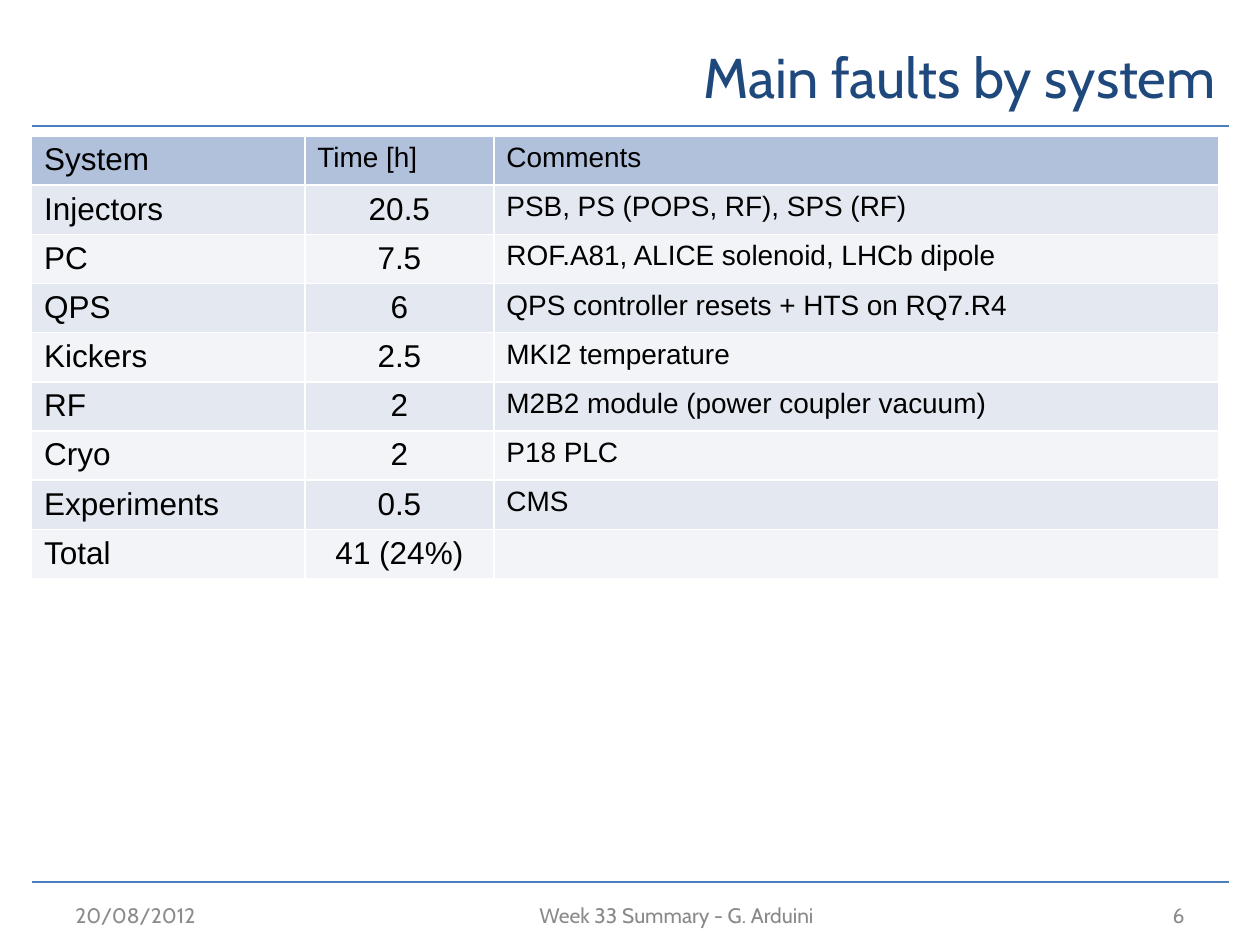
from pptx import Presentation
from pptx.dml.color import RGBColor
from pptx.enum.shapes import MSO_CONNECTOR
from pptx.enum.text import MSO_ANCHOR, PP_ALIGN
from pptx.oxml.ns import qn
from pptx.util import Inches, Pt
from lxml import etree

LEFT, MID, RIGHT = PP_ALIGN.LEFT, PP_ALIGN.CENTER, PP_ALIGN.RIGHT
CENTRE = MSO_ANCHOR.MIDDLE
STRAIGHT = MSO_CONNECTOR.STRAIGHT

NAVY = RGBColor(0x1F, 0x49, 0x7D)
BLUE = RGBColor(0x4B, 0x7E, 0xBC)
GREY = RGBColor(0x8C, 0x8C, 0x8C)
SLATE = RGBColor(0x89, 0x89, 0x89)
BLACK = RGBColor(0, 0, 0)
HEAD = RGBColor(0xB2, 0xC1, 0xDB)
BANDS = RGBColor(0xF2, 0xF4, 0xF8), RGBColor(0xE4, 0xE9, 0xF1)

WIDE, HIGH = 10, 7.5
EDGE = 0.25
COLS = 2.17, 1.5, 5.75
ROW = 0.38
FAULTS = [
    ("System", "Time [h]", "Comments"),
    ("Injectors", "20.5", "PSB, PS (POPS, RF), SPS (RF)"),
    ("PC", "7.5", "ROF.A81, ALICE solenoid, LHCb dipole"),
    ("QPS", "6", "QPS controller resets + HTS on RQ7.R4"),
    ("Kickers", "2.5", "MKI2 temperature"),
    ("RF", "2", "M2B2 module (power coupler vacuum)"),
    ("Cryo", "2", "P18 PLC"),
    ("Experiments", "0.5", "CMS"),
    ("Total", "41 (24%)", ""),
]


def write(frame, text, size=12, font="Cabin", color=GREY, align=LEFT):
    """Write one formatted line into a text frame."""
    line = frame.paragraphs[0]
    line.alignment = align
    run = line.add_run()
    run.text = text
    run.font.size = Pt(size)
    run.font.name = font
    run.font.bold = False
    run.font.color.rgb = color


def label(slide, box, text, **style):
    """Place a centred-height text box."""
    frame = slide.shapes.add_textbox(*map(Inches, box)).text_frame
    frame.word_wrap = True
    frame.vertical_anchor = CENTRE
    frame.margin_top = frame.margin_bottom = 0
    write(frame, text, **style)


def rule(slide, top):
    """Draw a line across the slide between its edges."""
    line = slide.shapes.add_connector(
        STRAIGHT, *map(Inches, (EDGE, top, WIDE - EDGE, top)))
    line.line.color.rgb = BLUE
    line.line.width = Pt(1.5)
    etree.SubElement(line._element.spPr, qn("a:effectLst"))


def header(slide, box):
    """Place the title above its rule."""
    rule(slide, 1)
    label(slide, box, "Main faults by system", size=32, color=NAVY, align=RIGHT)


def faults(slide, left, top):
    """Build the banded table of faults."""
    box = left, top, sum(COLS), ROW * len(FAULTS)
    table = slide.shapes.add_table(
        len(FAULTS), len(COLS), *map(Inches, box)).table
    for col, width in zip(table.columns, COLS):
        col.width = Inches(width)
    for r, row in enumerate(FAULTS):
        table.rows[r].height = Inches(ROW)
        for c, text in enumerate(row):
            cell = table.cell(r, c)
            cell.margin_bottom = Inches(0.04)
            cell.fill.solid()
            cell.fill.fore_color.rgb = BANDS[r % 2] if r else HEAD
            big = c == 0 or (c == 1 and r > 0)
            write(cell.text_frame, text, size=18 if big else 16, font="Arial",
                  color=BLACK, align=MID if c == 1 and r else LEFT)


def footer(slide, top, height):
    """Place the date, talk name and page number below a rule."""
    rule(slide, 7)
    side = 2.33
    label(slide, (0.5, top, side, height), "20/08/2012")
    label(slide, (1.83, top, 7.08, height), "Week 33 Summary - G. Arduini",
          color=SLATE, align=MID)
    label(slide, (WIDE - 0.5 - side, top, side, height), "6", align=RIGHT)


def main():
    """Build and save the slide."""
    deck = Presentation()
    deck.slide_width, deck.slide_height = Inches(WIDE), Inches(HIGH)
    slide = deck.slides.add_slide(deck.slide_layouts[6])
    header(slide, (1.75, 0.17, WIDE - EDGE - 1.75, 0.87))
    faults(slide, EDGE, 1.08)
    footer(slide, 7.17, 0.18)
    deck.save("out.pptx")


if __name__ == "__main__":
    main()
